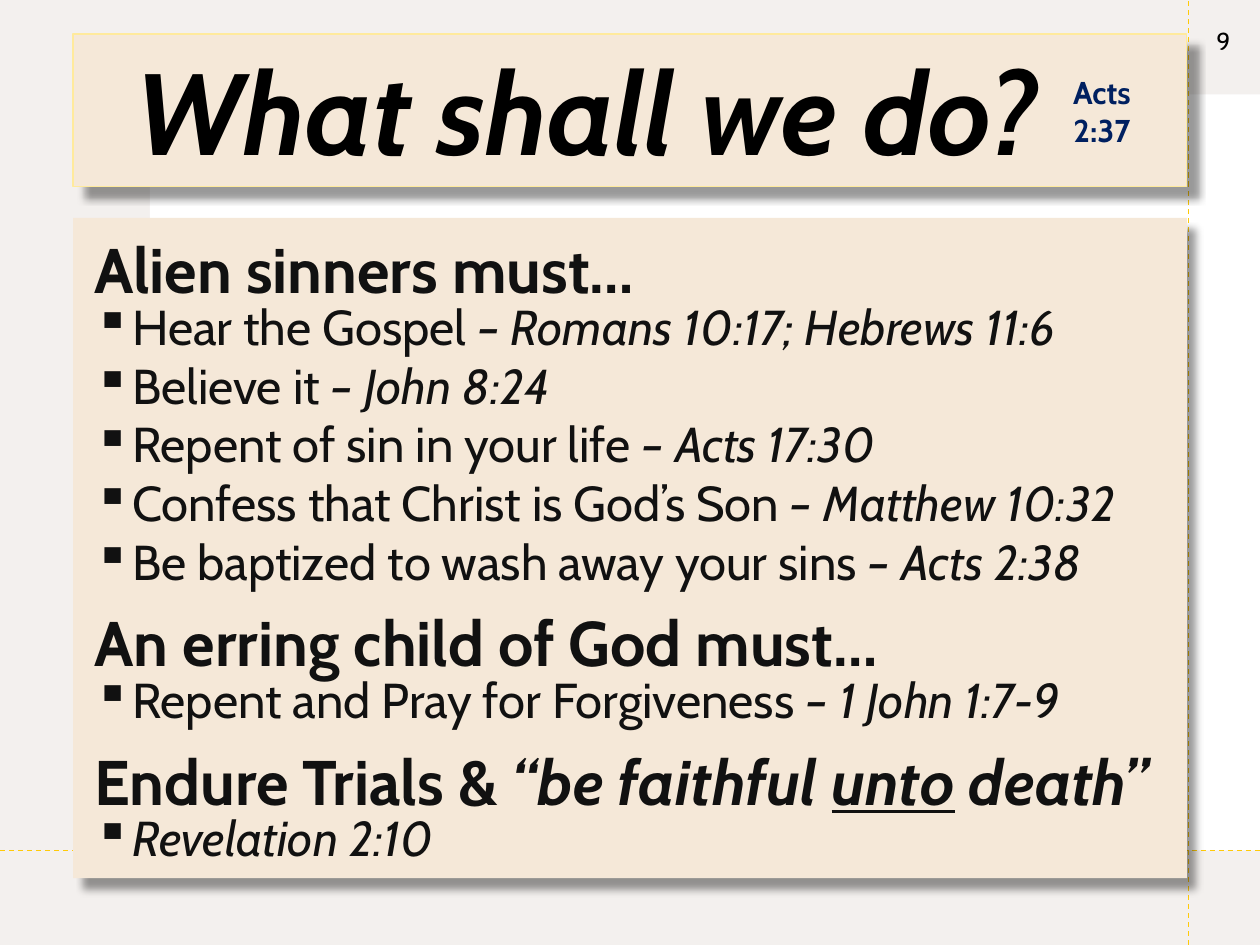
import pptx
import pptx.dml.color
import pptx.enum.dml
import pptx.enum.shapes
import pptx.enum.text
import pptx.util
from lxml import etree
from pptx.dml.color import RGBColor
from pptx.oxml.ns import qn
from pptx.util import Inches, Pt

FONT = "Cabin"
WHITE = RGBColor(0xFF, 0xFF, 0xFF)
BLACK = RGBColor(0, 0, 0)
INK = RGBColor(0x11, 0x11, 0x11)
NAVY = RGBColor(0x00, 0x20, 0x60)
STONE = RGBColor(0xE5, 0xDE, 0xDB)
CREAM = RGBColor(0xF5, 0xE8, 0xD8)
GOLD = RGBColor(0xFF, 0xCA, 0x08)
PALE_GOLD = RGBColor(0xFF, 0xEA, 0x9C)
ALIGN = pptx.enum.text.PP_ALIGN

# Each section: heading runs as (text, italic, underline), then (deed, verse) points.
SECTIONS = [
    ([("Alien sinners must…", False, False)],
     [("Hear the Gospel ", "– Romans 10:17; Hebrews 11:6"),
      ("Believe it ", "– John 8:24"),
      ("Repent of sin in your life ", "– Acts 17:30"),
      ("Confess that Christ is God’s Son ", "– Matthew 10:32"),
      ("Be baptized to wash away your sins ", "– Acts 2:38")]),
    ([("An erring child of God must…", False, False)],
     [("Repent and Pray for Forgiveness ", "– 1 John 1:7-9")]),
    ([("Endure Trials & ", False, False), ("“be faithful ", True, False),
      ("unto", True, True), (" death”", True, False)],
     [("", "Revelation 2:10")]),
]


class SlideBuilder:
    def __init__(self, slide):
        self.slide = slide

    def panel(self, left, top, width, height, fill, alpha=None, line=None):
        shape = self.slide.shapes.add_shape(
            pptx.enum.shapes.MSO_SHAPE.RECTANGLE,
            Inches(left), Inches(top), Inches(width), Inches(height))
        shape.shadow.inherit = False
        shape.fill.solid()
        shape.fill.fore_color.rgb = fill
        if alpha is not None:
            color = shape.fill._xPr.find(qn("a:solidFill"))[0]
            etree.SubElement(color, qn("a:alpha"), val=str(alpha * 1000))
        if line is None:
            shape.line.fill.background()
        else:
            shape.line.color.rgb = line
            shape.line.width = Pt(0.75)
        return shape

    def cast_shadow(self, shape, angle):
        effects = shape._element.spPr.find(qn("a:effectLst"))
        shadow = etree.SubElement(
            effects, qn("a:outerShdw"), blurRad=str(Pt(4)), dist=str(Pt(9)),
            dir=str(angle * 60000), algn="tl", rotWithShape="0")
        color = etree.SubElement(shadow, qn("a:srgbClr"), val=str(BLACK))
        etree.SubElement(color, qn("a:alpha"), val="40000")

    def guide(self, x1, y1, x2, y2):
        line = self.slide.shapes.add_connector(
            pptx.enum.shapes.MSO_CONNECTOR.STRAIGHT,
            Inches(x1), Inches(y1), Inches(x2), Inches(y2))
        line.line.color.rgb = GOLD
        line.line.width = Pt(0.75)
        line.line.dash_style = pptx.enum.dml.MSO_LINE.DASH
        etree.SubElement(line._element.spPr, qn("a:effectLst"))

    def frame(self, shape, horizontal=0.1, vertical=0.05):
        frame = shape.text_frame
        frame.word_wrap = True
        frame.margin_left = frame.margin_right = Inches(horizontal)
        frame.margin_top = frame.margin_bottom = Inches(vertical)
        frame.vertical_anchor = pptx.enum.text.MSO_ANCHOR.TOP
        return frame

    def paragraph(self, frame, first, indent=0, bullet=False, align=ALIGN.LEFT):
        paragraph = frame.paragraphs[0] if first else frame.add_paragraph()
        paragraph.alignment = align
        properties = paragraph._p.get_or_add_pPr()
        properties.set("marL", str(Inches(indent)))
        properties.set("indent", str(Inches(-0.3 if bullet else 0)))
        if bullet:
            etree.SubElement(properties, qn("a:buChar"), char="▪")
        else:
            etree.SubElement(properties, qn("a:buNone"))
        return paragraph

    def run(self, paragraph, text, size, color, bold=False, italic=False, underline=False):
        run = paragraph.add_run()
        run.text = text
        font = run.font
        font.name, font.size, font.color.rgb = FONT, Pt(size), color
        font.bold, font.italic, font.underline = bold, italic, underline

    def label(self, left, top, width, height, text, size, color, bold=False):
        box = self.slide.shapes.add_textbox(
            Inches(left), Inches(top), Inches(width), Inches(height))
        paragraph = self.paragraph(self.frame(box), True, align=ALIGN.CENTER)
        self.run(paragraph, text, size, color, bold)

    def sections(self, frame):
        for number, (heading, points) in enumerate(SECTIONS):
            paragraph = self.paragraph(frame, number == 0, 0.1)
            paragraph.line_spacing = 1.1
            paragraph.space_before = Pt(3.4 if number else 0)
            for text, italic, underline in heading:
                self.run(paragraph, text, 36, INK, True, italic, underline)
            for position, (deed, verse) in enumerate(points):
                paragraph = self.paragraph(frame, False, 0.4, bullet=True)
                paragraph.line_spacing = Pt(28) if position == 0 else 1.0
                if deed:
                    self.run(paragraph, deed, 28, INK)
                self.run(paragraph, verse, 28, INK, italic=True)


def main():
    presentation = pptx.Presentation()
    presentation.slide_width, presentation.slide_height = Inches(10), Inches(7.5)
    builder = SlideBuilder(presentation.slides.add_slide(presentation.slide_layouts[6]))

    builder.panel(0, 0, 10, 7.5, STONE, alpha=45)
    builder.panel(1.19, 0.75, 8.81, 6, WHITE)
    builder.guide(9.43, 7.5, 9.43, 0)
    builder.guide(0, 6.75, 10, 6.75)

    body = builder.panel(0.58, 1.73, 8.84, 5.24, CREAM)
    builder.cast_shadow(body, 50)
    builder.sections(builder.frame(body, 0.07, 0.04))

    title = builder.panel(0.58, 0.27, 8.84, 1.21, CREAM, line=PALE_GOLD)
    builder.cast_shadow(title, 45)
    paragraph = builder.paragraph(builder.frame(title), True, 0.4)
    builder.run(paragraph, "What shall we do?", 66, BLACK, True, True)

    builder.label(8.32, 0.53, 0.85, 0.71, "Acts 2:37", 18, NAVY, True)
    builder.label(9.43, 0.16, 0.56, 0.35, "9", 14, BLACK)
    presentation.save("out.pptx")


if __name__ == "__main__":
    main()
